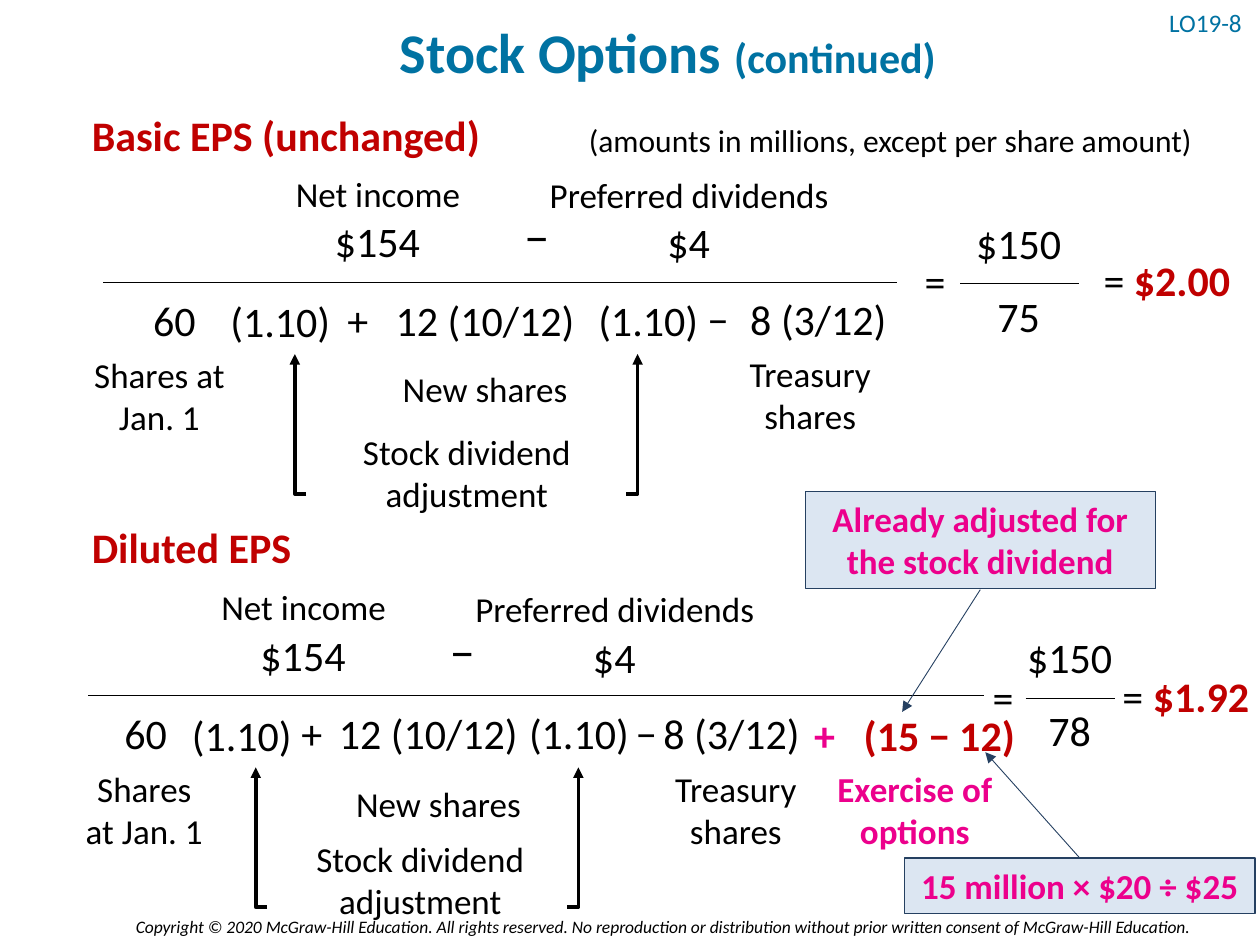
from pptx import Presentation
from pptx.util import Inches, Pt
from pptx.dml.color import RGBColor
from pptx.enum.shapes import MSO_SHAPE, MSO_CONNECTOR
from pptx.enum.text import PP_ALIGN as AL, MSO_ANCHOR as ANC
from pptx.oxml.ns import qn
from lxml import etree

BLACK = RGBColor(0, 0, 0)
BLUE = RGBColor(0x00, 0x72, 0xA2)
RED = RGBColor(0xC0, 0x00, 0x00)
PINK = RGBColor(0xEC, 0x00, 0x8C)
NAVY = RGBColor(0x25, 0x40, 0x61)
PALE = RGBColor(0xDC, 0xE6, 0xF2)

prs = Presentation()
prs.slide_width, prs.slide_height = Inches(10), Inches(7.5)
slide = prs.slides.add_slide(prs.slide_layouts[6])


def put_text(s, runs, align=AL.CENTER, anchor=ANC.TOP):
    tf = s.text_frame
    tf.word_wrap = True
    tf.vertical_anchor = anchor
    p = tf.paragraphs[0]
    p.alignment = align
    for text, size, color, bold in runs:
        r = p.add_run()
        r.text = text
        r.font.name = "Calibri"
        r.font.size = Pt(size)
        r.font.bold = bold
        r.font.color.rgb = color
    return p


def style_line(s, color, width, arrow=False):
    s.line.color.rgb = color
    s.line.width = Pt(width)
    if arrow:
        etree.SubElement(s.line._get_or_add_ln(), qn("a:tailEnd"), type="triangle")
    if s._element.spPr.find(qn("a:effectLst")) is None:
        etree.SubElement(s._element.spPr, qn("a:effectLst"))


labels = [
    (0.6, 0.04, 9.4, 0.68, AL.CENTER, ANC.MIDDLE, 1.1,
     [("Stock Options ", 32, BLUE, True), ("(continued)", 24, BLUE, True)]),
    (9.18, 0.01, 0.81, 0.4, AL.LEFT, ANC.MIDDLE, 0.7, [("LO19-8", 14.4, BLUE, False)]),
    (2.83, 0.91, 6.73, 0.4, AL.RIGHT, ANC.MIDDLE, 1.0,
     [("(amounts in millions, except per share amount)", 18, BLACK, False)]),
    (0.63, 0.82, 3.58, 0.5, AL.LEFT, ANC.TOP, 1.0, [("Basic EPS (unchanged)", 24, RED, True)]),
    (0.63, 4.09, 3.58, 0.5, AL.LEFT, ANC.TOP, 1.0, [("Diluted EPS", 24, RED, True)]),
    (8.66, 1.97, 1.39, 0.5, AL.LEFT, ANC.MIDDLE, 1.0,
     [("= ", 24, BLACK, False), ("$2.00", 24, RED, True)]),
    (8.81, 5.27, 1.24, 0.5, AL.LEFT, ANC.MIDDLE, 1.0,
     [("= ", 24, BLACK, False), ("$1.92", 24, RED, True)]),
    (6.28, 5.58, 0.53, 0.5, AL.CENTER, ANC.TOP, 1.0, [("+", 24, PINK, True)]),
    (6.58, 5.58, 1.75, 0.5, AL.CENTER, ANC.TOP, 1.0, [("(15 − 12)", 24, RED, True)]),
    (6.47, 6.04, 1.58, 0.77, AL.CENTER, ANC.TOP, 1.0, [("Exercise of options", 20, PINK, True)]),
]
for x, y, w, h, align, anchor, spacing, runs in labels:
    s = slide.shapes.add_textbox(Inches(x), Inches(y), Inches(w), Inches(h))
    p = put_text(s, runs, align, anchor)
    p.line_spacing = spacing

basic_terms = [
    ("Net income", 20, 1.99, 1.32, 2.02, 0.44),
    ("$154", 24, 2.37, 1.66, 1.25, 0.5),
    ("−", 28, 3.87, 1.59, 0.78, 0.57),
    ("Preferred dividends", 20, 4.24, 1.33, 2.46, 0.44),
    ("$4", 24, 4.84, 1.67, 1.25, 0.5),
    ("60", 24, 0.76, 2.29, 1.25, 0.5),
    ("(1.10)", 24, 1.6, 2.3, 1.25, 0.5),
    ("+", 24, 2.45, 2.29, 0.78, 0.5),
    ("12 (10/12)", 24, 2.84, 2.29, 2.02, 0.5),
    ("(1.10)", 24, 4.52, 2.29, 1.25, 0.5),
    ("−", 24, 5.31, 2.28, 0.78, 0.5),
    ("8 (3/12)", 24, 5.74, 2.28, 1.51, 0.5),
    ("Shares at Jan. 1", 20, 0.59, 2.76, 1.35, 0.77),
    ("New shares", 20, 3.06, 2.87, 1.58, 0.44),
    ("Stock dividend adjustment", 20, 2.61, 3.37, 2.19, 0.77),
    ("Treasury shares", 20, 5.64, 2.75, 1.58, 0.77),
    ("=", 24, 7.24, 1.98, 0.44, 0.5),
    ("$150", 24, 7.46, 1.68, 1.25, 0.5),
    ("75", 24, 7.46, 2.26, 1.25, 0.5),
]
diluted_terms = [
    ("Net income", 20, 1.4, 4.6, 2.02, 0.44),
    ("$154", 24, 1.78, 4.95, 1.25, 0.5),
    ("−", 28, 3.28, 4.88, 0.78, 0.57),
    ("Preferred dividends", 20, 3.65, 4.61, 2.46, 0.44),
    ("$4", 24, 4.25, 4.96, 1.25, 0.5),
    ("60", 24, 0.71, 5.57, 0.89, 0.5),
    ("(1.10)", 24, 1.4, 5.58, 1.04, 0.5),
    ("+", 24, 2.21, 5.57, 0.53, 0.5),
    ("12 (10/12)", 24, 2.39, 5.57, 2.02, 0.5),
    ("(1.10)", 24, 3.97, 5.57, 1.25, 0.5),
    ("−", 24, 4.74, 5.57, 0.78, 0.5),
    ("8 (3/12)", 24, 5.05, 5.57, 1.51, 0.5),
    ("Shares at Jan. 1", 20, 0.57, 6.04, 1.15, 0.77),
    ("New shares", 20, 2.69, 6.16, 1.58, 0.44),
    ("Stock dividend adjustment", 20, 2.24, 6.6, 2.19, 0.77),
    ("Treasury shares", 20, 5.05, 6.04, 1.58, 0.77),
    ("=", 24, 7.78, 5.28, 0.44, 0.5),
    ("$150", 24, 8.02, 4.96, 0.94, 0.5),
    ("78", 24, 8.02, 5.54, 0.94, 0.5),
]
for text, size, x, y, w, h in basic_terms + diluted_terms:
    s = slide.shapes.add_textbox(Inches(x), Inches(y), Inches(w), Inches(h))
    put_text(s, [(text, size, BLACK, False)], AL.LEFT if text == "=" else AL.CENTER)

s = slide.shapes.add_textbox(Inches(0.45), Inches(7.22), Inches(9.09), Inches(0.27))
p = put_text(s, [("Copyright © 2020 McGraw-Hill Education. All rights reserved. "
                  "No reproduction or distribution without prior written consent "
                  "of McGraw-Hill Education.", 10, BLACK, False)], AL.RIGHT)
p.runs[0].font.italic = True

for text, x, y, w, h in [
    ("Already adjusted for the stock dividend", 6.39, 3.9, 2.78, 0.77),
    ("15 million × $20 ÷ $25", 7.18, 6.81, 2.78, 0.44),
]:
    s = slide.shapes.add_shape(MSO_SHAPE.RECTANGLE, Inches(x), Inches(y), Inches(w), Inches(h))
    s.shadow.inherit = False
    s.fill.solid()
    s.fill.fore_color.rgb = PALE
    style_line(s, NAVY, 0.75)
    put_text(s, [(text, 20, PINK, True)])

for x1, y1, x2, y2, color, arrow in [
    (0.82, 2.24, 7.12, 2.24, BLACK, False),
    (7.62, 2.25, 8.56, 2.25, BLACK, False),
    (0.7, 5.52, 7.81, 5.52, BLACK, False),
    (8.14, 5.54, 8.85, 5.54, BLACK, False),
    (7.78, 4.68, 7.16, 5.65, NAVY, True),
    (8.57, 6.81, 7.82, 5.97, NAVY, True),
]:
    s = slide.shapes.add_connector(MSO_CONNECTOR.STRAIGHT, Inches(x1), Inches(y1), Inches(x2), Inches(y2))
    style_line(s, color, 0.5, arrow)

for foot, stem, top in [(2.43, 2.34, 2.81), (4.97, 5.06, 2.81), (2.12, 2.03, 6.09), (4.5, 4.59, 6.09)]:
    bottom = Inches(top + 1.11)
    path = slide.shapes.build_freeform(Inches(foot), bottom)
    path.add_line_segments([(Inches(stem), bottom), (Inches(stem), Inches(top))], close=False)
    s = path.convert_to_shape()
    s.shadow.inherit = False
    s.fill.background()
    style_line(s, BLACK, 2, True)

prs.save("out.pptx")
